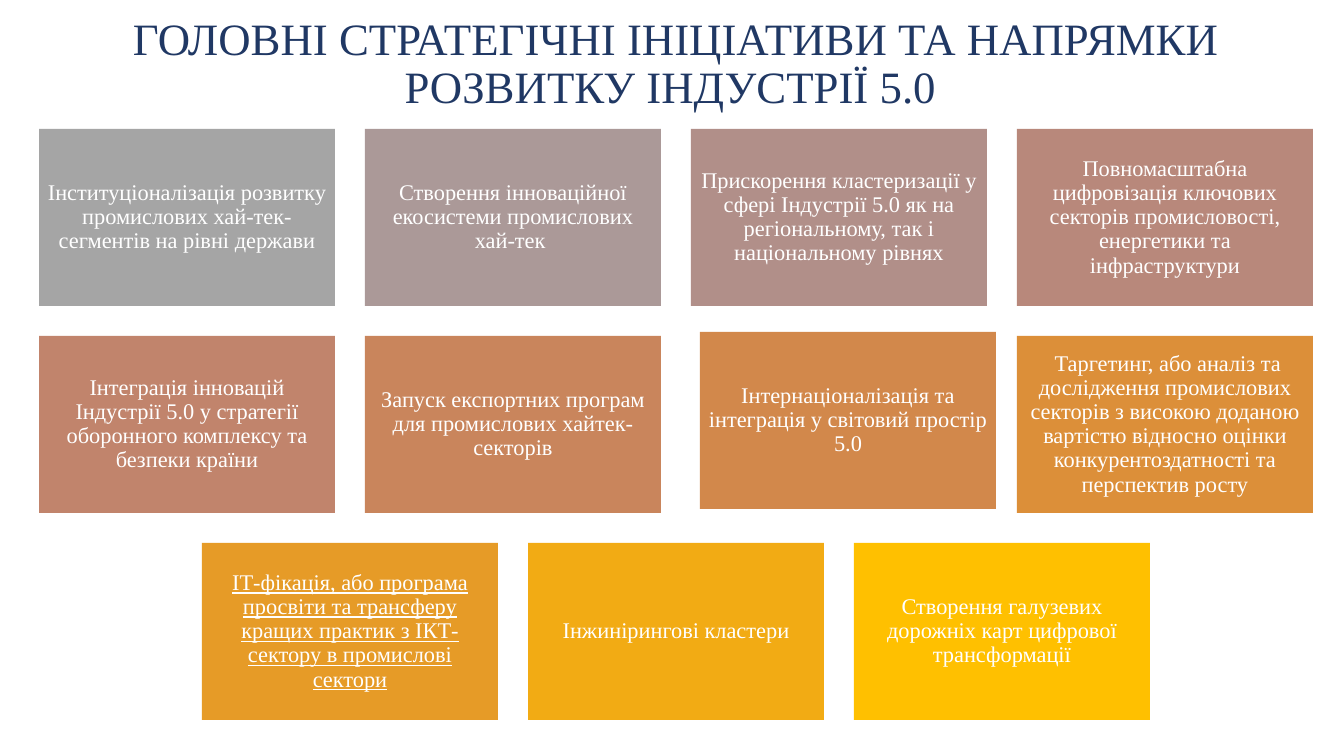
import pptx
import pptx.dml.color
import pptx.enum.shapes
import pptx.enum.text
import pptx.util
from dataclasses import dataclass


@dataclass(frozen=True)
class Theme:
    font: str = "Times New Roman"
    title_size: int = 32
    card_size: int = 16
    title_color: str = "203864"
    card_text: str = "FFFFFF"
    card_fills: tuple = (
        "A5A5A5", "AB9998", "B18F89", "B8887B", "C1846C", "C9855C",
        "D2884B", "DC8F39", "E69B27", "F2AB14", "FFC000",
    )


THEME = Theme()
EMU_PER_PX = 914400 / 100.8
SLIDE_W, SLIDE_H = 1344, 756
CARD_W, CARD_H, GAP = 296, 177, 30
GRID_CENTER, GRID_TOP = 676, 129
CARD_INSET = 7

TITLE = "ГОЛОВНІ СТРАТЕГІЧНІ ІНІЦІАТИВИ ТА НАПРЯМКИ РОЗВИТКУ ІНДУСТРІЇ 5.0 "
INTERNATIONAL = "Інтернаціоналізація та інтеграція у світовий простір 5.0"
IT_PROGRAM = ("ІТ-фікація, або програма просвіти та трансферу кращих практик "
              "з ІКТ-сектору в промислові сектори")
INITIATIVE_ROWS = [
    [
        "Інституціоналізація розвитку промислових хай-тек-сегментів на рівні держави",
        "Створення інноваційної екосистеми промислових хай-тек ",
        "Прискорення кластеризації у сфері Індустрії 5.0 як на регіональному, "
        "так і національному рівнях",
        "Повномасштабна цифровізація ключових секторів промисловості, "
        "енергетики та інфраструктури",
    ],
    [
        "Інтеграція інновацій Індустрії 5.0 у стратегії оборонного комплексу "
        "та безпеки країни",
        "Запуск експортних програм для промислових хайтек-секторів",
        INTERNATIONAL,
        " Таргетинг, або аналіз та дослідження промислових секторів з високою "
        "доданою вартістю відносно оцінки конкурентоздатності та перспектив росту",
    ],
    [
        IT_PROGRAM,
        "Інжинірингові кластери",
        "Створення галузевих дорожніх карт цифрової трансформації",
    ],
]
NUDGES = {INTERNATIONAL: (9, -4)}
UNDERLINED = {IT_PROGRAM}


def px(n):
    return pptx.util.Emu(round(n * EMU_PER_PX))


def rgb(value):
    return pptx.dml.color.RGBColor.from_string(value)


def write_centered(tf, text, size, color, underline=None):
    tf.word_wrap = True
    tf.vertical_anchor = pptx.enum.text.MSO_ANCHOR.MIDDLE
    p = tf.paragraphs[0]
    p.alignment = pptx.enum.text.PP_ALIGN.CENTER
    p.line_spacing = 0.9
    r = p.add_run()
    r.text = text
    r.font.name = THEME.font
    r.font.size = pptx.util.Pt(size)
    r.font.color.rgb = rgb(color)
    r.font.underline = underline


def add_title(s):
    box = s.shapes.add_textbox(px(14), px(-8), px(1324), px(146))
    write_centered(box.text_frame, TITLE, THEME.title_size, THEME.title_color)


def add_card(s, x, y, text, fill):
    sp = s.shapes.add_shape(pptx.enum.shapes.MSO_SHAPE.RECTANGLE,
                            px(x), px(y), px(CARD_W), px(CARD_H))
    sp.shadow.inherit = False
    sp.fill.solid()
    sp.fill.fore_color.rgb = rgb(fill)
    sp.line.fill.background()
    tf = sp.text_frame
    tf.margin_left = tf.margin_right = px(CARD_INSET)
    tf.margin_top = tf.margin_bottom = px(CARD_INSET)
    write_centered(tf, text, THEME.card_size, THEME.card_text,
                   True if text in UNDERLINED else None)


def add_card_grid(s):
    """Lay out each row of cards centred on the same axis."""
    fills = iter(THEME.card_fills)
    for row, texts in enumerate(INITIATIVE_ROWS):
        row_w = len(texts) * (CARD_W + GAP) - GAP
        left = GRID_CENTER - row_w // 2
        top = GRID_TOP + row * (CARD_H + GAP)
        for col, text in enumerate(texts):
            dx, dy = NUDGES.get(text, (0, 0))
            add_card(s, left + col * (CARD_W + GAP) + dx, top + dy,
                     text, next(fills))


def main():
    prs = pptx.Presentation()
    prs.slide_width, prs.slide_height = px(SLIDE_W), px(SLIDE_H)
    s = prs.slides.add_slide(prs.slide_layouts[6])
    add_title(s)
    add_card_grid(s)
    prs.save("out.pptx")


if __name__ == "__main__":
    main()
